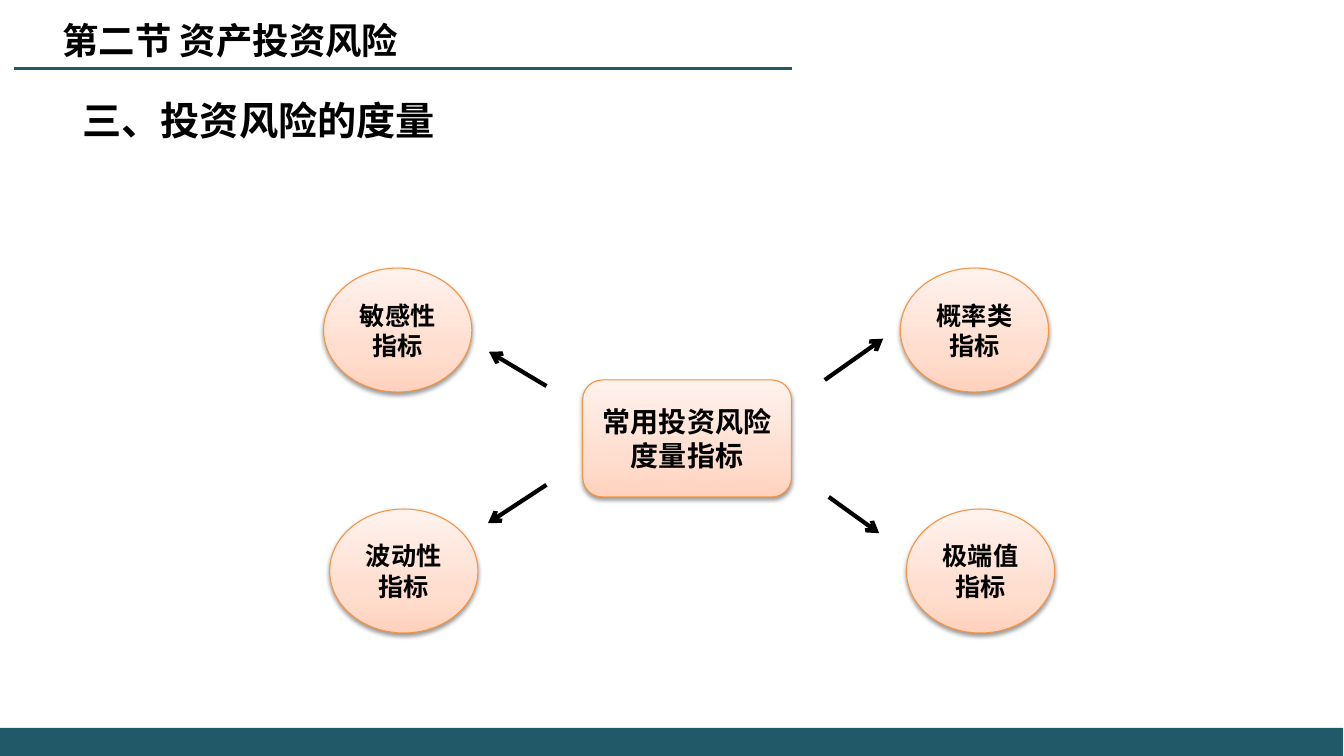
from lxml import etree
from pptx import Presentation
from pptx.dml.color import RGBColor
from pptx.enum.shapes import MSO_CONNECTOR, MSO_SHAPE as Shape
from pptx.enum.text import MSO_ANCHOR as Anchor, MSO_AUTO_SIZE as AutoSize, PP_ALIGN as Align
from pptx.oxml import parse_xml
from pptx.oxml.ns import nsdecls, qn
from pptx.util import Inches, Pt

COLORS = {"teal": "215968", "black": "000000", "orange": "F69240",
          "peach": "FFD2BD", "light_peach": "FFDED0", "pale": "FFF2ED"}
CJK_FONT, LATIN_FONT = "Noto Sans CJK SC", "Times New Roman"

GRADIENT = f"""<a:gradFill {nsdecls('a')} rotWithShape="1"><a:gsLst>
<a:gs pos="0"><a:srgbClr val="{COLORS['peach']}"/></a:gs>
<a:gs pos="35000"><a:srgbClr val="{COLORS['light_peach']}"/></a:gs>
<a:gs pos="100000"><a:srgbClr val="{COLORS['pale']}"/></a:gs>
</a:gsLst><a:lin ang="16200000" scaled="0"/></a:gradFill>"""
SHADOW = f"""<a:effectLst {nsdecls('a')}>
<a:outerShdw blurRad="40000" dist="20000" dir="5400000" rotWithShape="0">
<a:srgbClr val="{COLORS['black']}"><a:alpha val="38000"/></a:srgbClr>
</a:outerShdw></a:effectLst>"""


def write_text(shape, text, size, font_name, **frame_format):
    frame = shape.text_frame
    for name, value in {"word_wrap": True, **frame_format}.items():
        setattr(frame, name, value)
    run = frame.paragraphs[0].add_run()
    run.text = text
    run.font.color.rgb = RGBColor.from_string(COLORS["black"])
    for name, value in {"size": Pt(size), "bold": True, "name": font_name}.items():
        setattr(run.font, name, value)
    east_asian = etree.SubElement(run.font._element, qn("a:ea"))
    east_asian.set("typeface", CJK_FONT)


def add_line(start, end, color, width):
    points = [Inches(value) for value in (*start, *end)]
    line = slide.shapes.add_connector(MSO_CONNECTOR.STRAIGHT, *points)
    line.line.color.rgb = RGBColor.from_string(COLORS[color])
    line.line.width = Pt(width)
    etree.SubElement(line._element.spPr, qn("a:effectLst"))
    return line


presentation = Presentation()
presentation.slide_width, presentation.slide_height = Inches(13.33), Inches(7.5)
slide = presentation.slides.add_slide(presentation.slide_layouts[6])

# Footer band and heading rule
footer = slide.shapes.add_shape(Shape.RECTANGLE, 0, Inches(7.22), Inches(13.32), Inches(0.28))
footer.shadow.inherit = False
footer.fill.solid()
footer.fill.fore_color.rgb = RGBColor.from_string(COLORS["teal"])
footer.line.fill.background()
add_line((7.86, 0.68), (0.14, 0.68), "teal", 1.5)

# Headings
headings = [
    ("第二节 资产投资风险", (0.52, 0.13, 5.77, 0.54), 26, CJK_FONT),
    ("三、投资风险的度量", (0.72, 0.91, 11.31, 0.57), 28, LATIN_FONT),
]
for text, box, size, font_name in headings:
    heading = slide.shapes.add_textbox(*[Inches(value) for value in box])
    write_text(heading, text, size, font_name, auto_size=AutoSize.SHAPE_TO_FIT_TEXT)

# Central topic and its four indicator types
oval_size = (1.47, 1.23)
nodes = [
    ("常用投资风险度量指标", Shape.ROUNDED_RECTANGLE, (5.78, 3.77), (2.07, 1.16), 20),
    ("敏感性指标", Shape.OVAL, (3.21, 2.66), oval_size, 18),
    ("波动性指标", Shape.OVAL, (3.27, 5.05), oval_size, 18),
    ("概率类指标", Shape.OVAL, (8.93, 2.66), oval_size, 18),
    ("极端值指标", Shape.OVAL, (8.99, 5.05), oval_size, 18),
]
for text, kind, position, extent, size in nodes:
    node = slide.shapes.add_shape(kind, *[Inches(value) for value in position + extent])
    node.line.color.rgb = RGBColor.from_string(COLORS["orange"])
    node.line.width = Pt(0.75)
    properties = node._element.spPr
    properties.find(qn("a:prstGeom")).addnext(parse_xml(GRADIENT))
    properties.append(parse_xml(SHADOW))
    write_text(node, text, size, LATIN_FONT, vertical_anchor=Anchor.MIDDLE)
    node.text_frame.paragraphs[0].alignment = Align.CENTER

# Arrows from the topic outwards
arrows = [
    ((5.42, 3.83), (4.85, 3.49)),
    ((8.18, 3.77), (8.76, 3.36)),
    ((5.42, 4.81), (4.84, 5.19)),
    ((8.22, 4.93), (8.72, 5.29)),
]
for start, end in arrows:
    arrow = add_line(start, end, "black", 3)
    etree.SubElement(arrow.line._get_or_add_ln(), qn("a:tailEnd")).set("type", "arrow")

presentation.save("out.pptx")
